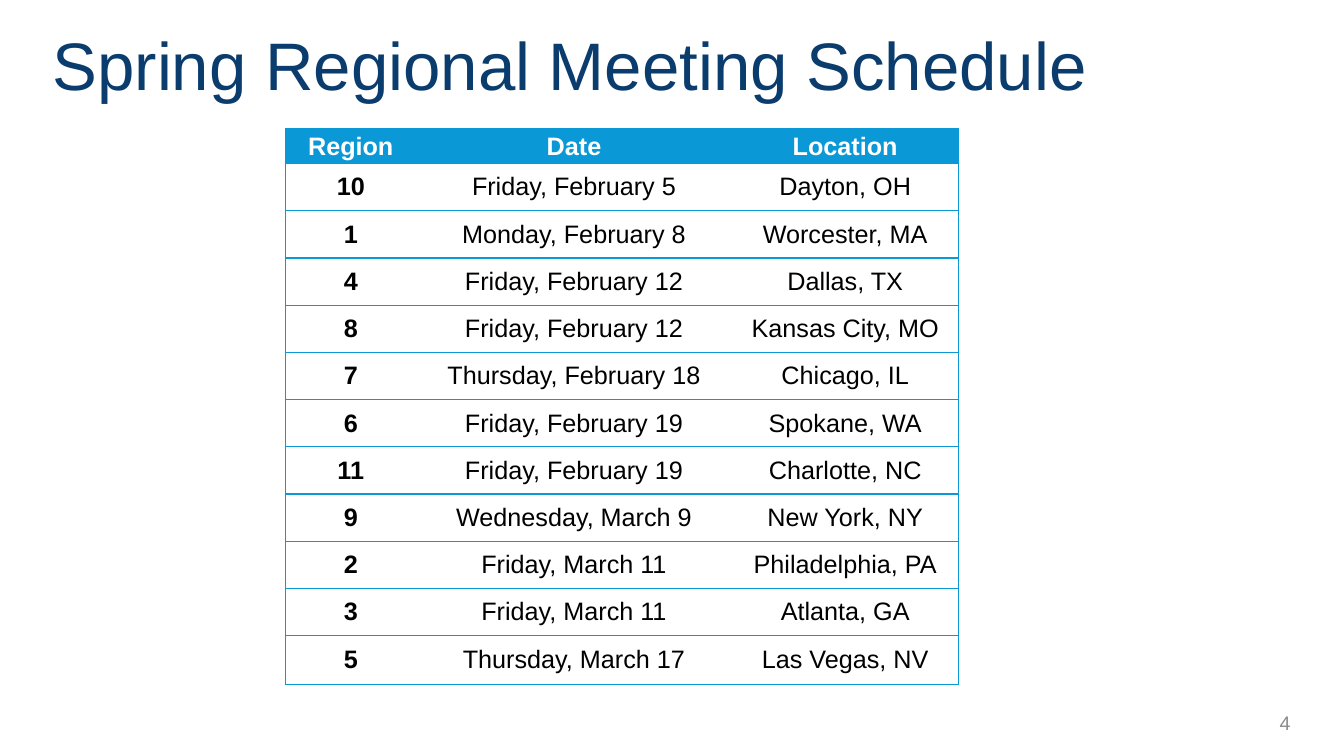
from dataclasses import dataclass

from lxml.etree import SubElement
from pptx import Presentation
from pptx.dml.color import RGBColor
from pptx.enum.text import MSO_ANCHOR as Anchor, PP_ALIGN as Align
from pptx.oxml.ns import qn
from pptx.util import Cm, Pt


@dataclass(frozen=True)
class Theme:
    font: str = "Arial"
    navy: str = "0A3C6E"
    blue: str = "0A98D6"
    grey: str = "8C8C8C"
    white: str = "FFFFFF"
    black: str = "000000"
    title_size: int = 48
    table_size: int = 18
    number_size: int = 14
    border_width: int = 1


@dataclass(frozen=True)
class Meeting:
    region: str
    date: str
    location: str


@dataclass(frozen=True)
class Area:
    left: float
    top: float
    width: float
    height: float

    def lengths(self) -> tuple:
        return Cm(self.left), Cm(self.top), Cm(self.width), Cm(self.height)


THEME = Theme()
TITLE_AREA = Area(1.07, 0.43, 32.36, 2.36)
TABLE_AREA = Area(7.19, 3.25, 16.97, 13.99)
NUMBER_AREA = Area(27.03, 17.7, 5.74, 1.02)
COLUMN_WIDTHS = (3.3, 7.95, 5.72)
HEADER_HEIGHT, ROW_HEIGHT, LAST_HEIGHT = 0.87, 1.19, 1.22

HEADER = Meeting("Region", "Date", "Location")
MEETINGS = (
    Meeting("10", "Friday, February 5", "Dayton, OH"),
    Meeting("1", "Monday, February 8", "Worcester, MA"),
    Meeting("4", "Friday, February 12", "Dallas, TX"),
    Meeting("8", "Friday, February 12", "Kansas City, MO"),
    Meeting("7", "Thursday, February 18", "Chicago, IL"),
    Meeting("6", "Friday, February 19", "Spokane, WA"),
    Meeting("11", "Friday, February 19", "Charlotte, NC"),
    Meeting("9", "Wednesday, March 9", "New York, NY"),
    Meeting("2", "Friday, March 11", "Philadelphia, PA"),
    Meeting("3", "Friday, March 11", "Atlanta, GA"),
    Meeting("5", "Thursday, March 17", "Las Vegas, NV"),
)


def write(frame, text: str, size: int, color: str, align: Align, bold: bool = False) -> None:
    frame.text = text
    para = frame.paragraphs[0]
    para.alignment = align
    for span in para.runs:
        span.font.name = THEME.font
        span.font.size = Pt(size)
        span.font.bold = bold
        span.font.color.rgb = RGBColor.from_string(color)


def add_borders(cell, visible: str) -> None:
    properties = cell._tc.get_or_add_tcPr()
    for side in "LRTB":
        line = SubElement(properties, qn(f"a:ln{side}"), w=str(Pt(THEME.border_width)))
        if side in visible:
            fill = SubElement(line, qn("a:solidFill"))
            SubElement(fill, qn("a:srgbClr"), val=THEME.blue)
        else:
            SubElement(line, qn("a:noFill"))


def fill_cell(cell, text: str, is_header: bool, column: int) -> None:
    last_column = len(COLUMN_WIDTHS) - 1
    cell.margin_left = cell.margin_right = Cm(0.18)
    cell.margin_top = cell.margin_bottom = 0
    cell.vertical_anchor = Anchor.MIDDLE
    add_borders(cell, "TB" + {0: "L", last_column: "R"}.get(column, ""))
    cell.fill.solid()
    cell.fill.fore_color.rgb = RGBColor.from_string(THEME.blue if is_header else THEME.white)
    color = THEME.white if is_header else THEME.black
    write(cell.text_frame, text, THEME.table_size, color, Align.CENTER, is_header or column == 0)


def add_schedule(page) -> None:
    entries = (HEADER, *MEETINGS)
    frame = page.shapes.add_table(len(entries), len(COLUMN_WIDTHS), *TABLE_AREA.lengths())
    table = frame.table
    table.horz_banding = False
    for column, width in zip(table.columns, COLUMN_WIDTHS):
        column.width = Cm(width)
    heights = (HEADER_HEIGHT, *[ROW_HEIGHT] * (len(MEETINGS) - 1), LAST_HEIGHT)
    for index, (entry, height) in enumerate(zip(entries, heights)):
        table.rows[index].height = Cm(height)
        for column, text in enumerate((entry.region, entry.date, entry.location)):
            fill_cell(table.cell(index, column), text, index == 0, column)


def add_title(page, text: str) -> None:
    title = page.shapes.title
    title.left, title.top, title.width, title.height = TITLE_AREA.lengths()
    title.text_frame.vertical_anchor = Anchor.MIDDLE
    write(title.text_frame, text, THEME.title_size, THEME.navy, Align.LEFT)


def add_page_number(page, text: str) -> None:
    box = page.shapes.add_textbox(*NUMBER_AREA.lengths())
    box.text_frame.word_wrap = True
    box.text_frame.vertical_anchor = Anchor.MIDDLE
    write(box.text_frame, text, THEME.number_size, THEME.grey, Align.RIGHT)


def main() -> None:
    deck = Presentation()
    deck.slide_width, deck.slide_height = Cm(33.87), Cm(19.05)
    page = deck.slides.add_slide(deck.slide_layouts[5])
    add_title(page, "Spring Regional Meeting Schedule")
    add_schedule(page)
    add_page_number(page, "4")
    deck.save("out.pptx")


if __name__ == "__main__":
    main()
